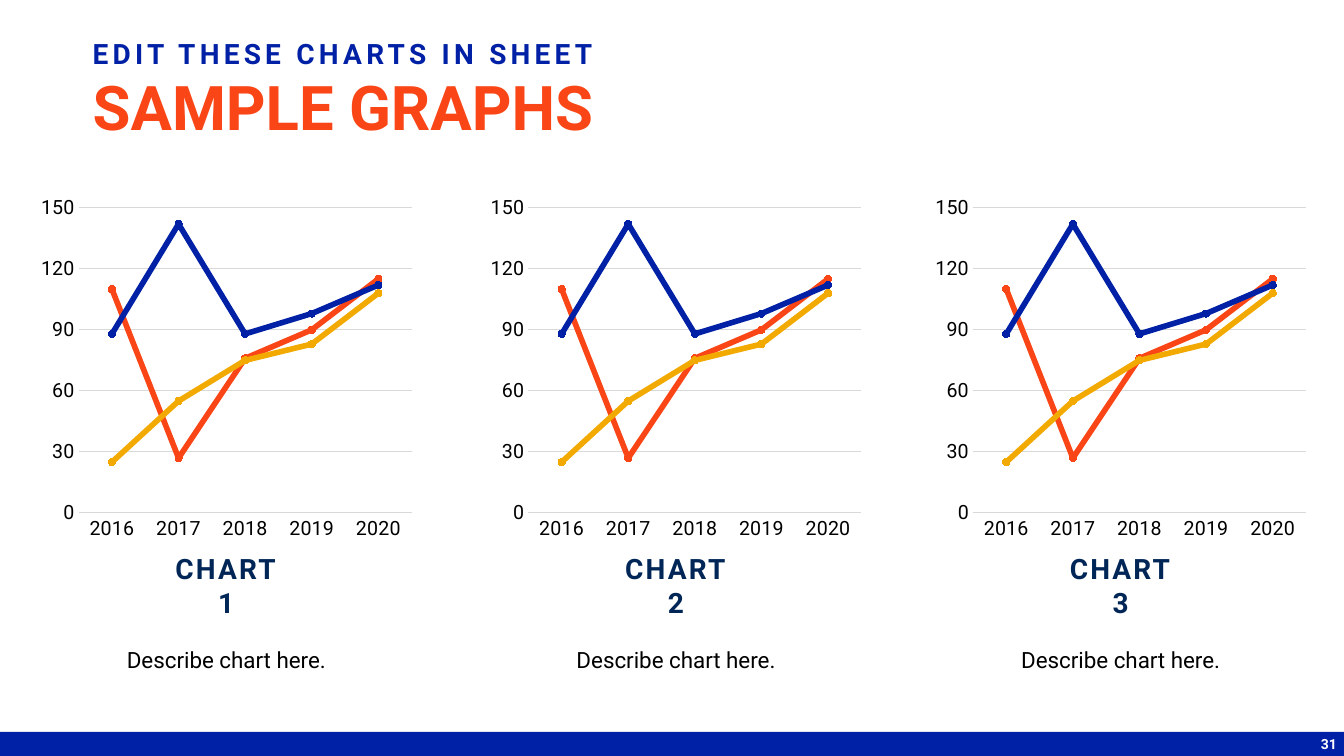
"""Build a slide with three sample line charts, each with a caption and a description."""
from dataclasses import dataclass

from pptx import Presentation
from pptx.chart.axis import CategoryAxis, ValueAxis
from pptx.chart.data import CategoryChartData
from pptx.dml.color import RGBColor
from pptx.enum.chart import XL_CHART_TYPE as ChartType
from pptx.enum.chart import XL_MARKER_STYLE as MarkerStyle
from pptx.enum.chart import XL_TICK_MARK as TickMark
from pptx.enum.shapes import MSO_SHAPE as ShapeKind
from pptx.enum.text import MSO_ANCHOR as Anchor
from pptx.enum.text import PP_ALIGN as Align
from pptx.slide import Slide
from pptx.util import Inches, Pt

FONT = "Roboto"
BLUE, ORANGE, YELLOW = "0020A5", "FA4616", "F2A900"
NAVY, BLACK, WHITE, GRID_GREY = "002657", "000000", "FFFFFF", "D9D9D9"
YEARS = ("2016", "2017", "2018", "2019", "2020")
CHART_LEFTS = (0.33, 4.79, 9.2)


@dataclass(frozen=True)
class Trend:
    name: str
    values: tuple[int, ...]
    color: str


@dataclass(frozen=True)
class Label:
    text: str
    left: float
    top: float
    width: float
    height: float
    size: int
    color: str
    bold: bool = True
    align: Align = Align.LEFT
    anchor: Anchor = Anchor.TOP
    side_inset: float = 0
    end_inset: float = 0
    line_spacing: float = 1
    space_before: int = 0
    tracking: float = 0


TRENDS = (
    Trend("Series 1", (110, 27, 76, 90, 115), ORANGE),
    Trend("Series 2", (88, 142, 88, 98, 112), BLUE),
    Trend("Series 3", (25, 55, 75, 83, 108), YELLOW),
)

HEADINGS = (
    Label("SAMPLE GRAPHS", 0.92, 0.4, 11.5, 1.03, 44, ORANGE,
          anchor=Anchor.BOTTOM, line_spacing=0.9),
    Label("31", 10.26, 7.29, 3, 0.17, 10, WHITE,
          align=Align.RIGHT, anchor=Anchor.BOTTOM),
    Label("EDIT THESE CHARTS IN SHEET", 0.92, 0.4, 11.5, 0.3, 20, BLUE,
          line_spacing=0.9, space_before=10, tracking=3),
)


def rgb(color: str) -> RGBColor:
    return RGBColor.from_string(color)


def add_label(slide: Slide, label: Label) -> None:
    box = slide.shapes.add_textbox(Inches(label.left), Inches(label.top),
                                   Inches(label.width), Inches(label.height))
    frame = box.text_frame
    frame.word_wrap = True
    frame.vertical_anchor = label.anchor
    frame.margin_left = frame.margin_right = Inches(label.side_inset)
    frame.margin_top = frame.margin_bottom = Inches(label.end_inset)
    frame.text = label.text
    paragraph = frame.paragraphs[0]
    paragraph.alignment = label.align
    paragraph.line_spacing = label.line_spacing
    paragraph.space_before = Pt(label.space_before)
    font = paragraph.runs[0].font
    font.name, font.size, font.bold = FONT, Pt(label.size), label.bold
    font.color.rgb = rgb(label.color)
    if label.tracking:
        paragraph.runs[0]._r.get_or_add_rPr().set("spc", str(int(label.tracking * 100)))


def style_axis(axis: CategoryAxis | ValueAxis) -> None:
    axis.major_tick_mark = axis.minor_tick_mark = TickMark.NONE
    font = axis.tick_labels.font
    font.name, font.size = FONT, Pt(14)
    font.color.rgb = rgb(BLACK)


def add_trend_chart(slide: Slide, left: float) -> None:
    data = CategoryChartData()
    data.categories = YEARS
    for trend in TRENDS:
        data.add_series(trend.name, trend.values)
    chart = slide.shapes.add_chart(ChartType.LINE_MARKERS, Inches(left), Inches(1.87),
                                   Inches(3.83), Inches(3.57), data).chart
    chart.has_title = chart.has_legend = False
    chart.font.name, chart.font.size = "TeX Gyre Adventor", Pt(24)
    chart.font.color.rgb = rgb(BLACK)
    chart.plots[0].vary_by_categories = False

    years, amounts = chart.category_axis, chart.value_axis
    style_axis(years)
    style_axis(amounts)
    amounts.minimum_scale, amounts.maximum_scale, amounts.major_unit = 0, 150, 30
    amounts.format.line.fill.background()
    amounts.has_major_gridlines = True
    for line in (years.format.line, amounts.major_gridlines.format.line):
        line.color.rgb = rgb(GRID_GREY)
        line.width = Pt(0.75)

    for series, trend in zip(chart.plots[0].series, TRENDS):
        series.smooth = False
        series.format.line.color.rgb = rgb(trend.color)
        series.format.line.width = Pt(4)
        marker = series.marker
        marker.style, marker.size = MarkerStyle.CIRCLE, 5
        marker.format.fill.solid()
        marker.format.fill.fore_color.rgb = rgb(trend.color)
        marker.format.line.color.rgb = rgb(trend.color)


def add_footer_band(slide: Slide) -> None:
    band = slide.shapes.add_shape(ShapeKind.RECTANGLE, Inches(0), Inches(7.26),
                                  Inches(13.33), Inches(0.24))
    band.shadow.inherit = False
    band.fill.solid()
    band.fill.fore_color.rgb = rgb(BLUE)
    band.line.fill.background()


def main() -> None:
    deck = Presentation()
    deck.slide_width, deck.slide_height = Inches(13.33), Inches(7.5)
    slide = deck.slides.add_slide(deck.slide_layouts[6])
    add_footer_band(slide)
    for heading in HEADINGS:
        add_label(slide, heading)
    for number, left in enumerate(CHART_LEFTS, start=1):
        add_trend_chart(slide, left)
        add_label(slide, Label("Describe chart here.", left + 0.11, 6.36, 3.61, 0.37, 16,
                               BLACK, bold=False, align=Align.CENTER, side_inset=0.1,
                               end_inset=0.05, space_before=12))
        add_label(slide, Label(f"CHART {number}", left + 1.2, 5.75, 1.43, 0.44, 20, NAVY,
                               align=Align.CENTER, anchor=Anchor.BOTTOM, side_inset=0.15,
                               end_inset=0.05, tracking=1.5))
    deck.save("out.pptx")


if __name__ == "__main__":
    main()
